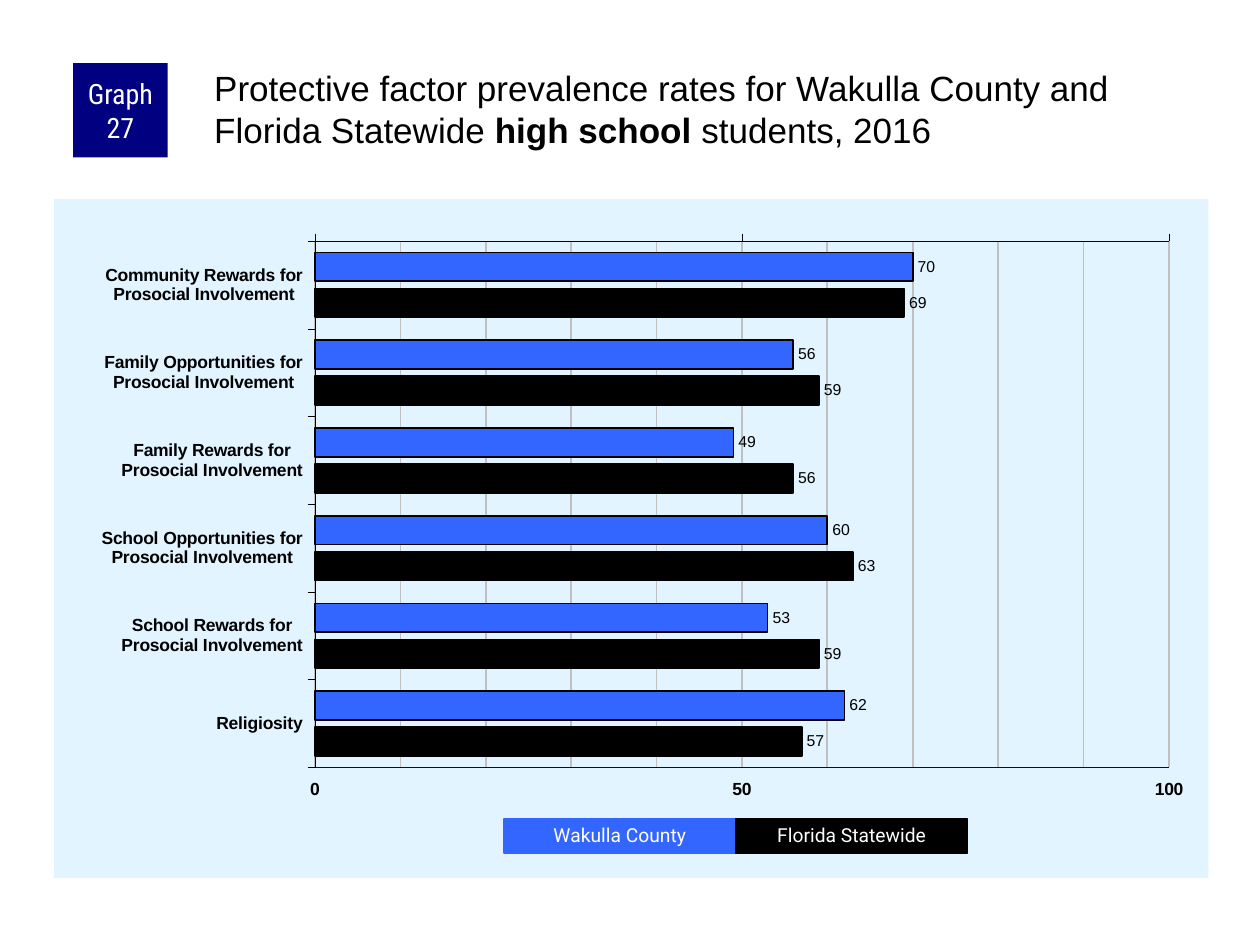
from copy import deepcopy
from dataclasses import dataclass

from lxml import etree
from pptx import Presentation
from pptx.chart.data import CategoryChartData
from pptx.dml.color import RGBColor
from pptx.enum.chart import XL_CHART_TYPE as Kind
from pptx.enum.chart import XL_LABEL_POSITION as Spot
from pptx.enum.chart import XL_TICK_LABEL_POSITION as Side
from pptx.enum.chart import XL_TICK_MARK as Tick
from pptx.enum.shapes import MSO_CONNECTOR as Link
from pptx.enum.shapes import MSO_SHAPE as Form
from pptx.enum.text import MSO_ANCHOR as Anchor
from pptx.enum.text import PP_ALIGN as Align
from pptx.oxml import parse_xml
from pptx.oxml.ns import nsdecls, qn
from pptx.util import Inches, Pt

HUES = {
    "black": "000000",
    "white": "FFFFFF",
    "navy": "000080",
    "blue": "3366FF",
    "pale": "E1F4FF",
    "grid": "C0C0C0",
}
PLOT = {"x": 0.226, "y": 0.062, "w": 0.74, "h": 0.775}
CATS = [
    "Community Rewards for\nProsocial Involvement",
    "Family Opportunities for\nProsocial Involvement",
    "Family Rewards for\nProsocial Involvement",
    "School Opportunities for\nProsocial Involvement",
    "School Rewards for\nProsocial Involvement",
    "Religiosity",
]


@dataclass
class Group:
    name: str
    hue: str
    rates: tuple[int, ...]


@dataclass
class Box:
    text: str
    left: float
    top: float
    width: float
    height: float
    hue: str
    face: str
    size: float
    pad: float
    edge: bool = False
    space: float = 1.0


GROUPS = [
    Group("Wakulla County", "blue", (70, 56, 49, 60, 53, 62)),
    Group("Florida Statewide", "black", (69, 59, 56, 63, 59, 57)),
]
BADGE = Box("Graph 27", 0.58, 0.5, 0.75, 0.75, "navy", "Roboto Condensed", 16, 0.05)
KEYS = [
    Box(g.name, 4 + 1.84 * i, 6.5, 1.84, 0.27, g.hue, "Roboto", 11, 0.1, True, 0.9)
    for i, g in enumerate(GROUPS)
]
TITLE = [
    ("Protective factor prevalence rates for Wakulla County and Florida Statewide ", False),
    ("high school ", True),
    ("students, 2016", False),
]


def tint(hue: str) -> RGBColor:
    return RGBColor.from_string(HUES[hue])


def paint(fill, hue: str) -> None:
    fill.solid()
    fill.fore_color.rgb = tint(hue)


def stroke(line, hue: str, width: float) -> None:
    paint(line.fill, hue)
    line.width = Pt(width)


def style(font, face: str, size: float, hue: str = "black", bold: bool = False) -> None:
    font.name = face
    font.size = Pt(size)
    font.bold = bold
    font.color.rgb = tint(hue)


def add_box(slide, box: Box) -> None:
    shape = slide.shapes.add_shape(
        Form.RECTANGLE, Inches(box.left), Inches(box.top), Inches(box.width), Inches(box.height)
    )
    shape.shadow.inherit = False
    paint(shape.fill, box.hue)
    if box.edge:
        stroke(shape.line, box.hue, 0.75)
    else:
        shape.line.fill.background()
    frame = shape.text_frame
    frame.word_wrap = True
    frame.vertical_anchor = Anchor.MIDDLE
    frame.margin_left = frame.margin_right = Inches(box.pad)
    frame.margin_top = frame.margin_bottom = 0
    para = frame.paragraphs[0]
    para.alignment = Align.CENTER
    para.line_spacing = box.space
    run = para.add_run()
    run.text = box.text
    style(run.font, box.face, box.size, "white")


def add_title(slide) -> None:
    area = slide.shapes.add_textbox(Inches(1.67), Inches(0.5), Inches(7.92), Inches(0.83))
    frame = area.text_frame
    frame.word_wrap = True
    frame.margin_left = frame.margin_top = Inches(0.03)
    frame.margin_right = frame.margin_bottom = 0
    for text, bold in TITLE:
        run = frame.paragraphs[0].add_run()
        run.text = text
        style(run.font, "Arial", 20, bold=bold)


def set_frame(chart) -> None:
    root = chart.element
    back = parse_xml(
        f'<c:spPr {nsdecls("c", "a")}><a:solidFill><a:srgbClr val="{HUES["pale"]}"/>'
        "</a:solidFill><a:ln><a:noFill/></a:ln></c:spPr>"
    )
    body = root.find(qn("c:chart"))
    body.addnext(back)
    plot = body.find(qn("c:plotArea"))
    for old in plot.findall(qn("c:layout")):
        plot.remove(old)
    modes = "".join(f'<c:{k}Mode val="edge"/>' for k in "xy")
    sizes = "".join(f'<c:{k} val="{v}"/>' for k, v in PLOT.items())
    plot.insert(0, parse_xml(
        f'<c:layout {nsdecls("c")}><c:manualLayout><c:layoutTarget val="inner"/>'
        f"{modes}{sizes}</c:manualLayout></c:layout>"
    ))


def set_axes(chart) -> None:
    cat, val = chart.category_axis, chart.value_axis
    for axis in (cat, val):
        axis.major_tick_mark = Tick.OUTSIDE
        axis.minor_tick_mark = Tick.NONE
        stroke(axis.format.line, "black", 0.25)
        style(axis.tick_labels.font, "Arial", 10, bold=True)
    cat.reverse_order = True
    val.tick_label_position = Side.HIGH
    val.minimum_scale, val.maximum_scale, val.major_unit = 0, 100, 50
    val.has_major_gridlines = val.has_minor_gridlines = True
    stroke(val.major_gridlines.format.line, "grid", 1)
    node = val._element
    look = node.find(qn("c:majorGridlines")).find(qn("c:spPr"))
    node.find(qn("c:minorGridlines")).append(deepcopy(look))
    unit = etree.Element(qn("c:minorUnit"), val="10")
    node.find(qn("c:majorUnit")).addnext(unit)


def add_bars(slide) -> None:
    data = CategoryChartData()
    data.categories = CATS
    for group in GROUPS:
        data.add_series(group.name, group.rates)
    chart = slide.shapes.add_chart(
        Kind.BAR_CLUSTERED, Inches(0.43), Inches(1.58), Inches(9.16), Inches(5.39), data
    ).chart
    chart.has_legend = chart.has_title = False
    style(chart.font, "Arial", 11.8)
    set_frame(chart)
    set_axes(chart)
    plot = chart.plots[0]
    plot.vary_by_categories = False
    plot.gap_width, plot.overlap = 80, -25
    for series, group in zip(plot.series, GROUPS):
        paint(series.format.fill, group.hue)
        stroke(series.format.line, "black", 1)
        labels = series.data_labels
        labels.show_value = True
        labels.position = Spot.OUTSIDE_END
        style(labels.font, "Arial", 9)


def add_base(slide) -> None:
    left = 0.43 + 9.16 * PLOT["x"]
    right = left + 9.16 * PLOT["w"]
    y = Inches(1.58 + 5.39 * (PLOT["y"] + PLOT["h"]))
    line = slide.shapes.add_connector(Link.STRAIGHT, Inches(left), y, Inches(right), y)
    stroke(line.line, "navy", 1)
    etree.SubElement(line._element.spPr, qn("a:effectLst"))


def main() -> None:
    deck = Presentation()
    deck.slide_width, deck.slide_height = Inches(10), Inches(7.5)
    slide = deck.slides.add_slide(deck.slide_layouts[6])
    add_bars(slide)
    add_base(slide)
    add_title(slide)
    for box in (BADGE, *KEYS):
        add_box(slide, box)
    deck.save("out.pptx")


if __name__ == "__main__":
    main()
